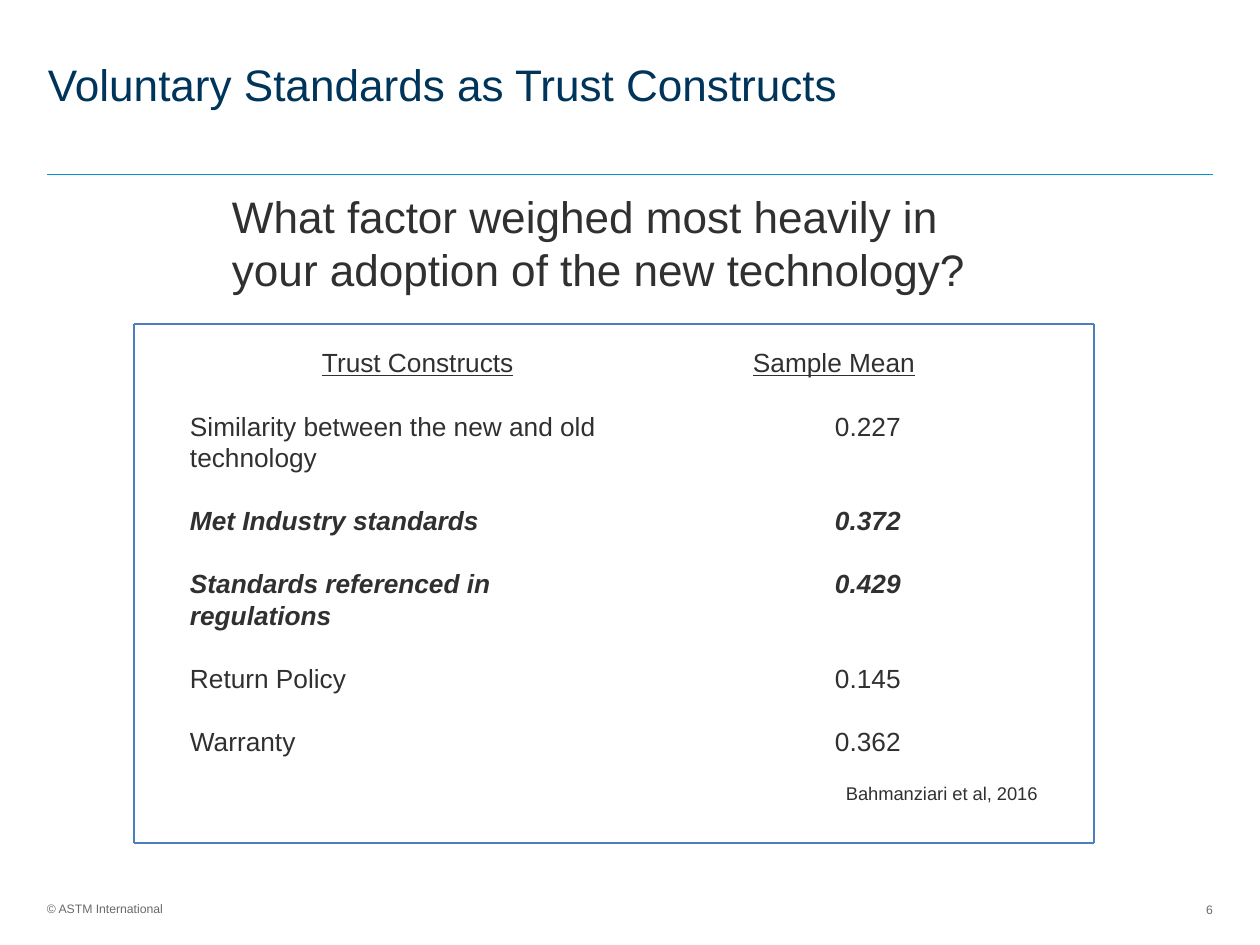
import itertools

import pptx
import pptx.dml.color
import pptx.enum.shapes
import pptx.enum.text
import pptx.oxml
import pptx.oxml.ns
import pptx.util

PIXEL = pptx.util.Inches(1) // 126
NAVY, INK, GRAY = "00355B", "303031", "6A6A6A"
RULE, FRAME = "0095D6", "4B7EBC"
LEFT, RIGHT = 47, 1213
HEADER_TABS = (132, 563)
VALUE_TABS = (645,)
ROWS = [
    (["Similarity between the new and old", "technology"], "0.227", False),
    (["Met Industry standards"], "0.372", True),
    (["Standards referenced in", "regulations"], "0.429", True),
    (["Return Policy"], "0.145", False),
    (["Warranty"], "0.362", False),
]


def color(value):
    return pptx.dml.color.RGBColor.from_string(value)


def write(paragraph, text, size=15, fill=INK, bold=False, italic=False, underline=False):
    run = paragraph.add_run()
    run.text = text
    font = run.font
    font.name = "Arial"
    font.size = pptx.util.Pt(size)
    font.bold, font.italic, font.underline = bold, italic, underline
    font.color.rgb = color(fill)


class SlideBuilder:
    """Draws styled elements on the current slide."""

    def __init__(self, slide):
        self.slide = slide

    def box(self, left, top, width, height, wrap=True):
        shape = self.slide.shapes.add_textbox(*(n * PIXEL for n in (left, top, width, height)))
        frame = shape.text_frame
        frame.word_wrap = wrap
        frame.margin_left = frame.margin_right = frame.margin_top = frame.margin_bottom = 0
        return frame

    def text(self, text, left, top, width, height, spacing=None, right=False, wrap=True, **style):
        paragraph = self.box(left, top, width, height, wrap).paragraphs[0]
        if spacing:
            paragraph.line_spacing = pptx.util.Pt(spacing)
        if right:
            paragraph.alignment = pptx.enum.text.PP_ALIGN.RIGHT
        write(paragraph, text, **style)

    def line(self, start, end, fill, width):
        connector = self.slide.shapes.add_connector(
            pptx.enum.shapes.MSO_CONNECTOR.STRAIGHT, *(n * PIXEL for n in start + end))
        connector.line.color.rgb = color(fill)
        connector.line.width = pptx.util.Pt(width)
        properties = connector._element.spPr
        properties.append(pptx.oxml.parse_xml(
            f'<a:effectLst {pptx.oxml.ns.nsdecls("a")}/>'))

    def frame(self, left, top, right, bottom):
        corners = [(left, top), (right, top), (right, bottom), (left, bottom), (left, top)]
        for start, end in itertools.pairwise(corners):
            self.line(start, end, FRAME, 0.75)

    def tabbed_paragraph(self, paragraph, tabs, before=0):
        stops = "".join(f'<a:tab pos="{n * PIXEL}" algn="l"/>' for n in tabs)
        paragraph._p.get_or_add_pPr().append(pptx.oxml.parse_xml(
            f'<a:tabLst {pptx.oxml.ns.nsdecls("a")}>{stops}</a:tabLst>'))
        paragraph.line_spacing = pptx.util.Pt(18)
        paragraph.space_before = pptx.util.Pt(before)

    def results(self, left, top, width, height):
        frame = self.box(left, top, width, height)
        header = frame.paragraphs[0]
        self.tabbed_paragraph(header, HEADER_TABS)
        for heading in ("Trust Constructs", "Sample Mean"):
            write(header, "\t")
            write(header, heading, underline=True)
        for row, (lines, value, strong) in enumerate(ROWS):
            gap = 18 if row else 18.5
            for index, line in enumerate(lines):
                paragraph = frame.add_paragraph()
                self.tabbed_paragraph(paragraph, VALUE_TABS, 0 if index else gap)
                text = line if index else f"{line}\t{value}"
                write(paragraph, text, bold=strong, italic=strong)


def main():
    presentation = pptx.Presentation()
    presentation.slide_width = 1260 * PIXEL
    presentation.slide_height = 945 * PIXEL
    slide = presentation.slides.add_slide(presentation.slide_layouts[6])
    builder = SlideBuilder(slide)
    builder.text("© ASTM International", LEFT, 901, 142, 16, size=7, fill=GRAY)
    builder.line((LEFT, 174), (RIGHT, 174), RULE, 0.5)
    builder.text("6", 1151, 902, RIGHT - 1151, 16, right=True, size=7, fill=GRAY)
    builder.text("Voluntary Standards as Trust Constructs", 48, 58, 1046, 53,
                 spacing=30, size=25.2, fill=NAVY)
    builder.results(190, 346, 904, 410)
    builder.frame(134, 324, 1094, 843)
    builder.text("What factor weighed most heavily in your adoption of the new technology?",
                 232, 190, 780, 106, spacing=30, size=25.2)
    builder.text("Bahmanziari et al, 2016", 846, 782, 192, 22, wrap=False, size=10.5)
    presentation.save("out.pptx")


if __name__ == "__main__":
    main()
